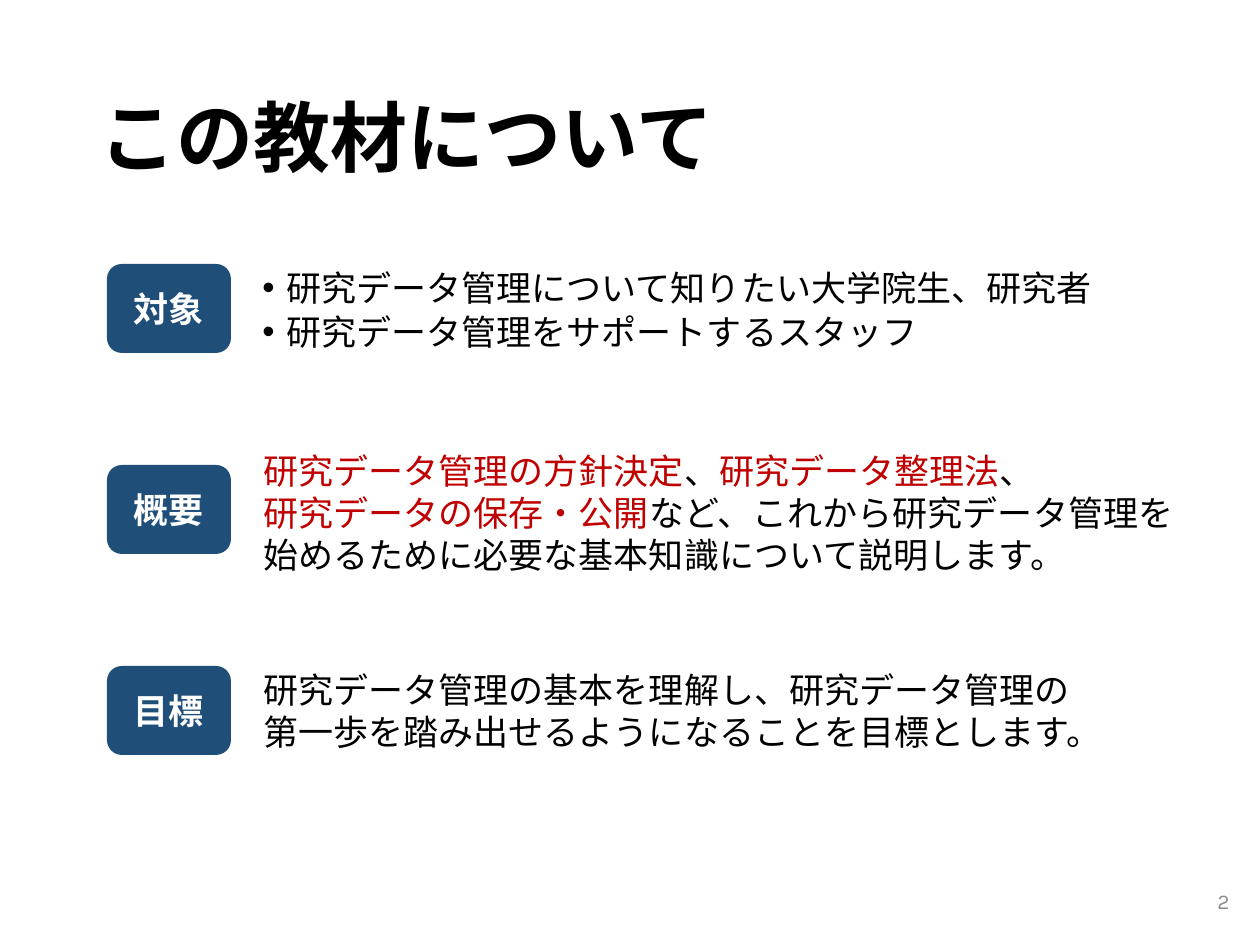
from lxml import etree
from pptx import Presentation, util as u
from pptx.dml.color import RGBColor
from pptx.enum import shapes, text
from pptx.oxml.ns import qn

PX = 914400 / 126
HUES = {"black": "000000", "red": "C00000", "navy": "1F4E79",
        "white": "FFFFFF", "gray": "8C8C8C"}
HEAD, BODY = "Karla", "Noto Sans CJK JP"


def px(*nums):
    return [u.Emu(round(n * PX)) for n in nums]


def style(run, face, size, hue, bold=False):
    font = run.font
    font.name, font.size, font.bold = face, u.Pt(size), bold
    font.color.rgb = RGBColor.from_string(HUES[hue])
    etree.SubElement(font._element, qn("a:ea"), typeface=BODY)


def frame(slide, box, anchor):
    tf = slide.shapes.add_textbox(*px(*box)).text_frame
    tf.word_wrap = True
    tf.vertical_anchor = anchor
    return tf


def label(slide, box, words, size, hue, bold, align):
    """Place one line of text, centred in the height of its box."""
    para = frame(slide, box, text.MSO_ANCHOR.MIDDLE).paragraphs[0]
    para.text, para.alignment = words, align
    style(para.runs[0], HEAD, size, hue, bold)
    return para


def badge(slide, box, words):
    shape = slide.shapes.add_shape(
        shapes.MSO_SHAPE.ROUNDED_RECTANGLE, *px(*box))
    shape.shadow.inherit = False
    shape.fill.solid()
    shape.fill.fore_color.rgb = RGBColor.from_string(HUES["navy"])
    shape.line.fill.background()
    tf = shape.text_frame
    tf.vertical_anchor = text.MSO_ANCHOR.MIDDLE
    para = tf.paragraphs[0]
    para.text, para.alignment = words, text.PP_ALIGN.CENTER
    style(para.runs[0], HEAD, 20, "white", True)


def indent(para, left, hang=0):
    props = para._p.get_or_add_pPr()
    props.set("marL", str(px(left)[0]))
    props.set("indent", str(px(-hang)[0]))
    return props


def bullets(slide, box, items):
    tf = frame(slide, box, text.MSO_ANCHOR.TOP)
    tf.text = "\n".join(items)
    for para in tf.paragraphs:
        para.line_spacing, para.space_before = u.Pt(21.6), u.Pt(3.8)
        props = indent(para, 71, 24)
        etree.SubElement(props, qn("a:buFont"), typeface="Arial")
        etree.SubElement(props, qn("a:buChar"), char="•")
        style(para.runs[0], BODY, 20, "black")


def prose(slide, box, lines):
    """Place one paragraph; each line is a list of (words, hue) parts."""
    para = frame(slide, box, text.MSO_ANCHOR.TOP).paragraphs[0]
    para.line_spacing, para.space_before = u.Pt(24), u.Pt(3.8)
    indent(para, 48)
    for i, line in enumerate(lines):
        if i:
            para.add_line_break()
        for words, hue in line:
            run = para.add_run()
            run.text = words
            style(run, BODY, 20, hue)


ROWS = [
    ("対象", bullets, 0, 83, [
        "研究データ管理について知りたい大学院生、研究者",
        "研究データ管理をサポートするスタッフ"]),
    ("概要", prose, -22, 139, [
        [("研究データ管理の方針決定", "red"), ("、", "black"),
         ("研究データ整理法", "red"), ("、", "black")],
        [("研究データの保存・公開", "red"),
         ("など、これから研究データ管理を", "black")],
        [("始めるために必要な基本知識について説明します。", "black")]]),
    ("目標", prose, -4, 88, [
        [("研究データ管理の基本を理解し、研究データ管理の", "black")],
        [("第一歩を踏み出せるようになることを目標とします。", "black")]]),
]


def row(slide, left, top, name, fill, shift, high, body):
    """Place a badge and, beside it, text moved by shift from its top."""
    badge(slide, (left, top, 124, 89), name)
    fill(slide, (left + 96, top + shift, 1022, high), body)


def main():
    deck = Presentation()
    deck.slide_width, deck.slide_height = px(1260, 945)
    slide = deck.slides.add_slide(deck.slide_layouts[6])
    title = label(slide, (87, 50, 1086, 183), "この教材について", 44, "black",
                  True, text.PP_ALIGN.LEFT)
    title.line_spacing = 0.9
    for i, parts in enumerate(ROWS):
        row(slide, 107, 264 + 201 * i, *parts)
    label(slide, (959, 876, 283, 50), "2", 12, "gray", False,
          text.PP_ALIGN.RIGHT)
    deck.save("out.pptx")


if __name__ == "__main__":
    main()
